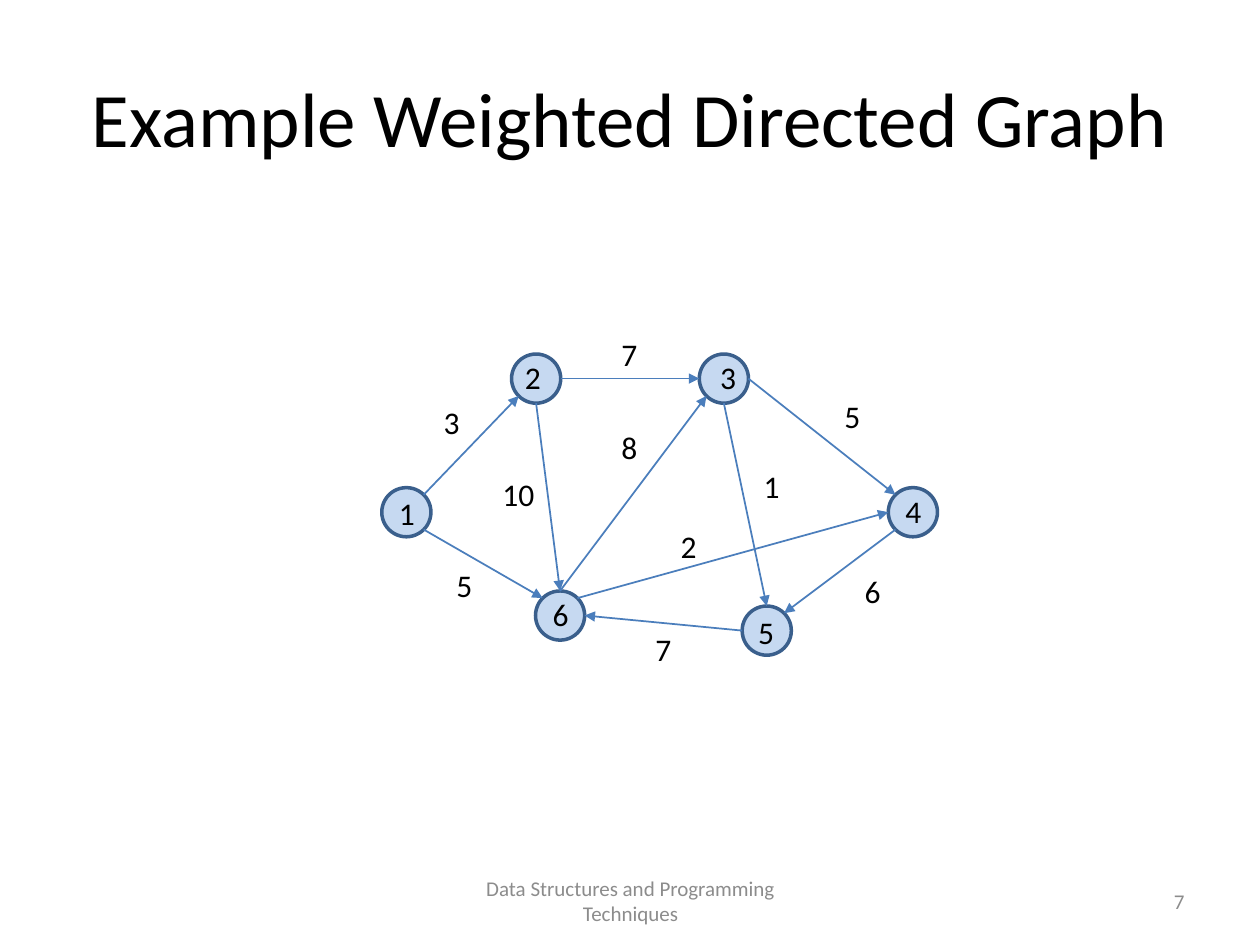
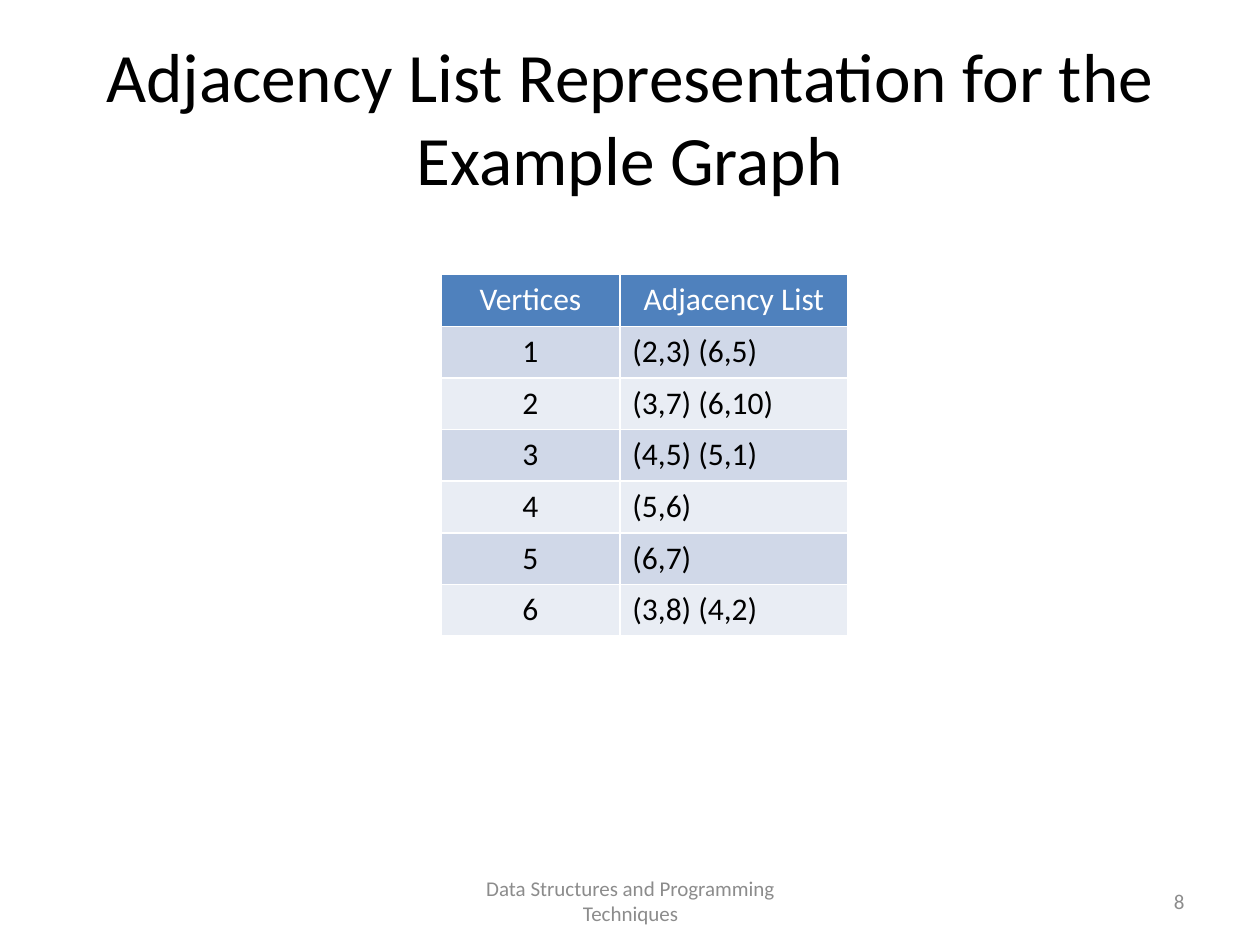
from dataclasses import dataclass
from enum import Enum
from math import sqrt

from lxml import etree
from pptx import Presentation
from pptx.dml.color import RGBColor
from pptx.enum.shapes import MSO_CONNECTOR, MSO_SHAPE
from pptx.enum.text import MSO_ANCHOR, MSO_AUTO_SIZE, PP_ALIGN
from pptx.oxml.ns import qn
from pptx.slide import Slide
from pptx.util import Inches, Pt

LEFT, CENTER, RIGHT = PP_ALIGN.LEFT, PP_ALIGN.CENTER, PP_ALIGN.RIGHT
MIDDLE, TOP = MSO_ANCHOR.MIDDLE, MSO_ANCHOR.TOP
NO_AUTOFIT = MSO_AUTO_SIZE.NONE
OVAL, STRAIGHT = MSO_SHAPE.OVAL, MSO_CONNECTOR.STRAIGHT

FONT = "Calibri"
BLACK, WHITE, FOOTER_GRAY = "000000", "FFFFFF", "8C8C8C"
VERTEX_FILL, VERTEX_LINE, EDGE_LINE = "C6D9F1", "3A5F8C", "4B7EBC"
HEADER_FILL, ROW_FILLS = "4F81BD", ("D0D8E8", "E9EDF4")

TITLE_ONLY_LAYOUT = 5
FIRST_PAGE_NUMBER = 7
FOOTER_TEXT = "Data Structures and Programming Techniques"
BODY_SIZE = 18
DIAMETER = 0.39
LABEL_HEIGHT = 0.4
NUMBER_WIDTH, WEIGHT_WIDTH = 0.34, 0.47
COLUMN_WIDTHS = (1.42, 1.81)
ROW_HEIGHT = 0.41
DIAGONAL = 1 / sqrt(2)


class Side(Enum):
    """Direction from a vertex centre to a point on its rim."""
    N = (0, -1)
    NE = (DIAGONAL, -DIAGONAL)
    E = (1, 0)
    SE = (DIAGONAL, DIAGONAL)
    S = (0, 1)
    SW = (-DIAGONAL, DIAGONAL)
    W = (-1, 0)
    NW = (-DIAGONAL, -DIAGONAL)


@dataclass(frozen=True)
class Vertex:
    left: float
    top: float
    number_left: float
    number_top: float

    def rim_point(self, side: Side) -> tuple[float, float]:
        across, down = side.value
        radius = DIAMETER / 2
        return (self.left + radius * (1 + across),
                self.top + radius * (1 + down))


@dataclass(frozen=True)
class Edge:
    start: int
    start_side: Side
    end: int
    end_side: Side
    weight: int
    weight_left: float
    weight_top: float


VERTICES = {
    1: Vertex(3.03, 3.87, 3.06, 3.87),
    2: Vertex(4.06, 2.81, 4.06, 2.79),
    3: Vertex(5.55, 2.81, 5.61, 2.79),
    4: Vertex(7.05, 3.87, 7.08, 3.86),
    5: Vertex(5.89, 4.81, 5.91, 4.82),
    6: Vertex(4.25, 4.69, 4.28, 4.67),
}

EDGES = [
    Edge(1, Side.NE, 2, Side.SW, 3, 3.35, 3.15),
    Edge(1, Side.SE, 6, Side.NW, 5, 3.45, 4.44),
    Edge(2, Side.E, 3, Side.W, 7, 4.76, 2.61),
    Edge(2, Side.S, 6, Side.N, 10, 3.88, 3.72),
    Edge(3, Side.E, 4, Side.NW, 5, 6.53, 3.1),
    Edge(3, Side.S, 5, Side.N, 1, 5.89, 3.66),
    Edge(4, Side.SW, 5, Side.NE, 6, 6.69, 4.49),
    Edge(5, Side.W, 6, Side.E, 7, 5.03, 4.95),
    Edge(6, Side.N, 3, Side.SW, 8, 4.76, 3.35),
    Edge(6, Side.NE, 4, Side.W, 2, 5.23, 4.13),
]


def color(value: str) -> RGBColor:
    return RGBColor.from_string(value)


def write(frame, text: str, size: float, text_color: str = BLACK,
          align=CENTER) -> None:
    """Fill a text frame with one formatted paragraph."""
    para = frame.paragraphs[0]
    para.alignment = align
    span = para.add_run()
    span.text = text
    formats = {"name": FONT, "size": Pt(size), "bold": False}
    for attribute, value in formats.items():
        setattr(span.font, attribute, value)
    span.font.color.rgb = color(text_color)


def add_text(page: Slide, text: str, left: float, top: float, width: float,
             size: float = BODY_SIZE, text_color: str = BLACK,
             align=CENTER, anchor=TOP) -> None:
    box = page.shapes.add_textbox(Inches(left), Inches(top),
                                  Inches(width), Inches(LABEL_HEIGHT))
    formats = {"word_wrap": True, "vertical_anchor": anchor}
    for attribute, value in formats.items():
        setattr(box.text_frame, attribute, value)
    write(box.text_frame, text, size, text_color, align)


def add_page(deck, title: str, title_size: float) -> Slide:
    """Add a slide with its title, footer and page number."""
    page = deck.slides.add_slide(deck.slide_layouts[TITLE_ONLY_LAYOUT])
    heading = page.shapes.title
    place = {"left": 0.5, "top": 0.3, "width": 9, "height": 1.25}
    for attribute, value in place.items():
        setattr(heading, attribute, Inches(value))
    formats = {"word_wrap": True, "auto_size": NO_AUTOFIT,
               "vertical_anchor": MIDDLE}
    for attribute, value in formats.items():
        setattr(heading.text_frame, attribute, value)
    write(heading.text_frame, title, title_size)

    page_number = FIRST_PAGE_NUMBER + len(deck.slides) - 1
    add_text(page, FOOTER_TEXT, 3.42, 6.95, 3.17, 12, FOOTER_GRAY,
             anchor=MIDDLE)
    add_text(page, str(page_number), 7.17, 6.95, 2.33, 12, FOOTER_GRAY,
             RIGHT, MIDDLE)
    return page


def add_vertex(page: Slide, number: int, vertex: Vertex) -> None:
    circle = page.shapes.add_shape(OVAL, Inches(vertex.left),
                                   Inches(vertex.top),
                                   Inches(DIAMETER), Inches(DIAMETER))
    circle.shadow.inherit = False
    circle.fill.solid()
    circle.fill.fore_color.rgb = color(VERTEX_FILL)
    circle.line.color.rgb = color(VERTEX_LINE)
    circle.line.width = Pt(2)
    add_text(page, str(number), vertex.number_left, vertex.number_top,
             NUMBER_WIDTH)


def add_edge(page: Slide, edge: Edge) -> None:
    start = VERTICES[edge.start].rim_point(edge.start_side)
    end = VERTICES[edge.end].rim_point(edge.end_side)
    arrow = page.shapes.add_connector(
        STRAIGHT, *(Inches(value) for value in start + end))
    arrow.line.color.rgb = color(EDGE_LINE)
    arrow.line.width = Pt(1)
    properties = arrow._element.spPr
    etree.SubElement(properties.find(qn("a:ln")), qn("a:tailEnd"),
                     type="triangle")
    etree.SubElement(properties, qn("a:effectLst"))
    add_text(page, str(edge.weight), edge.weight_left, edge.weight_top,
             WEIGHT_WIDTH)


def adjacency_list(number: int) -> str:
    return " ".join(f"({edge.end},{edge.weight})"
                    for edge in EDGES if edge.start == number)


def add_adjacency_table(page: Slide) -> None:
    rows = [("Vertices", "Adjacency List")]
    rows += [(str(number), adjacency_list(number)) for number in VERTICES]
    table = page.shapes.add_table(
        len(rows), len(COLUMN_WIDTHS), Inches(3.5), Inches(2.18),
        Inches(sum(COLUMN_WIDTHS)), Inches(ROW_HEIGHT * len(rows))).table
    for column, width in zip(table.columns, COLUMN_WIDTHS):
        column.width = Inches(width)
    for row_index, texts in enumerate(rows):
        is_header = row_index == 0
        fill = HEADER_FILL if is_header else ROW_FILLS[(row_index - 1) % 2]
        for column_index, text in enumerate(texts):
            cell = table.cell(row_index, column_index)
            cell.fill.solid()
            cell.fill.fore_color.rgb = color(fill)
            centered = is_header or column_index == 0
            write(cell.text_frame, text, BODY_SIZE,
                  WHITE if is_header else BLACK,
                  CENTER if centered else LEFT)


def main() -> None:
    deck = Presentation()
    deck.slide_width, deck.slide_height = Inches(10), Inches(7.5)

    graph_page = add_page(deck, "Example Weighted Directed Graph", 44)
    for number, vertex in VERTICES.items():
        add_vertex(graph_page, number, vertex)
    for edge in EDGES:
        add_edge(graph_page, edge)

    list_page = add_page(
        deck, "Adjacency List Representation for the Example Graph", 39.6)
    add_adjacency_table(list_page)

    deck.save("out.pptx")


if __name__ == "__main__":
    main()
